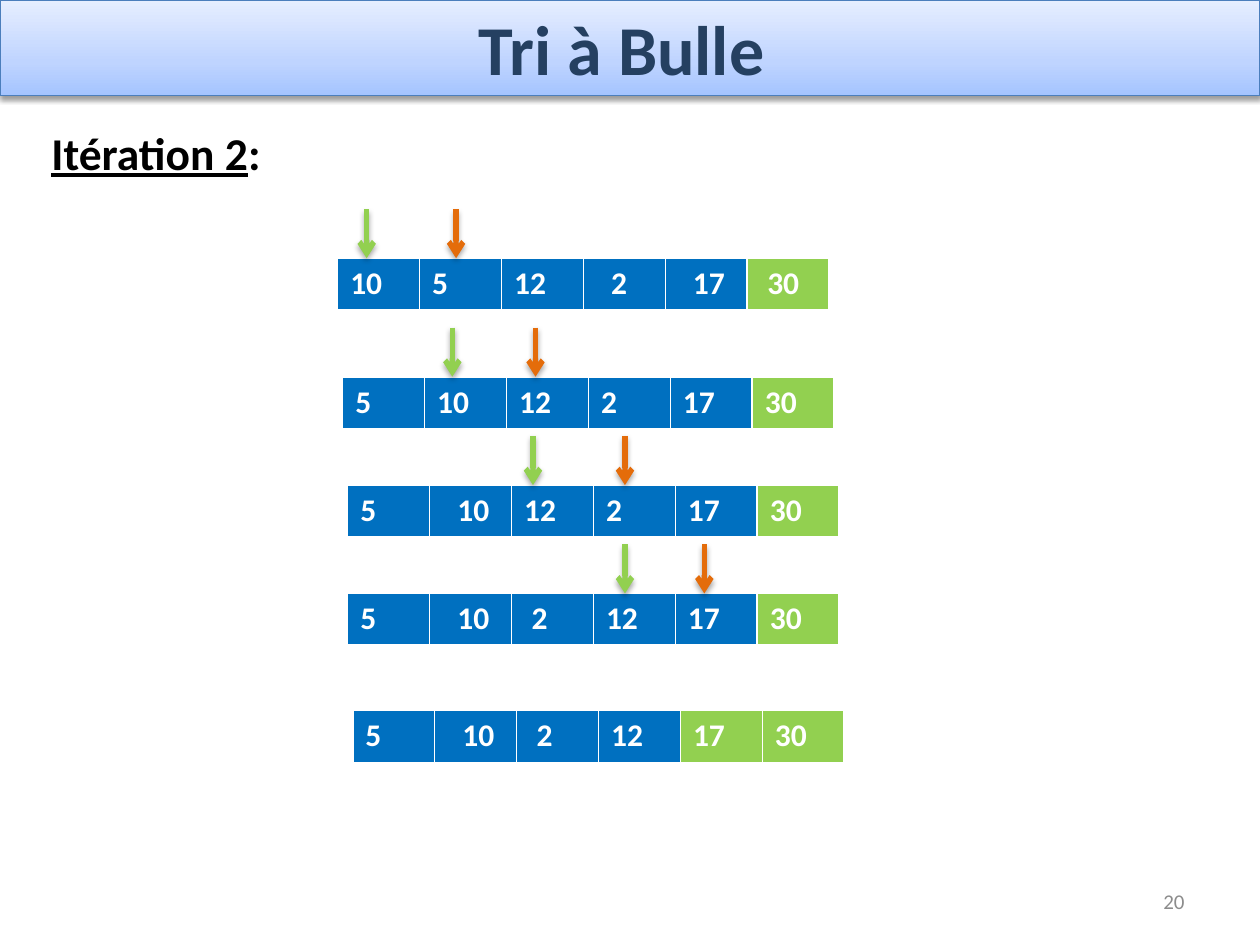
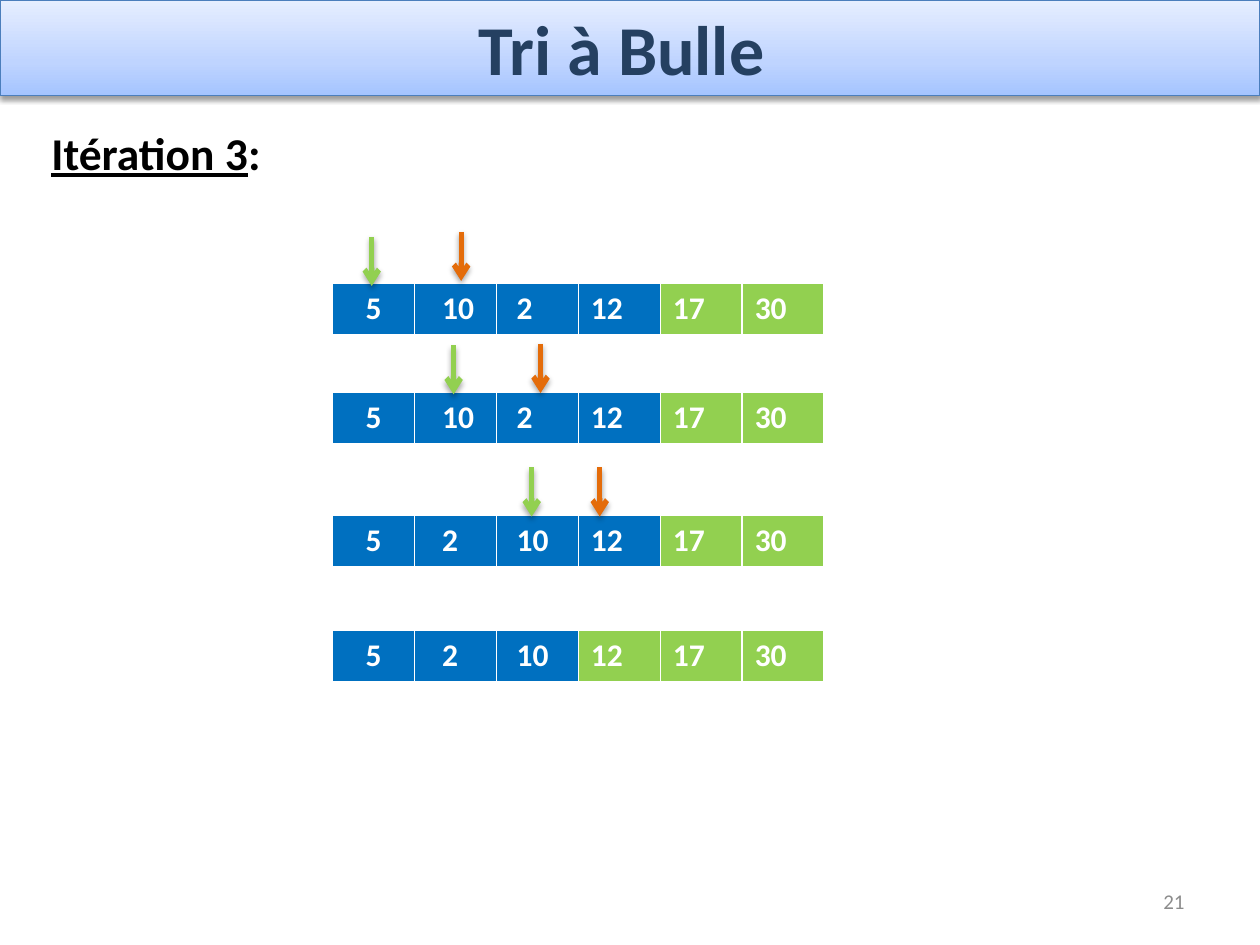
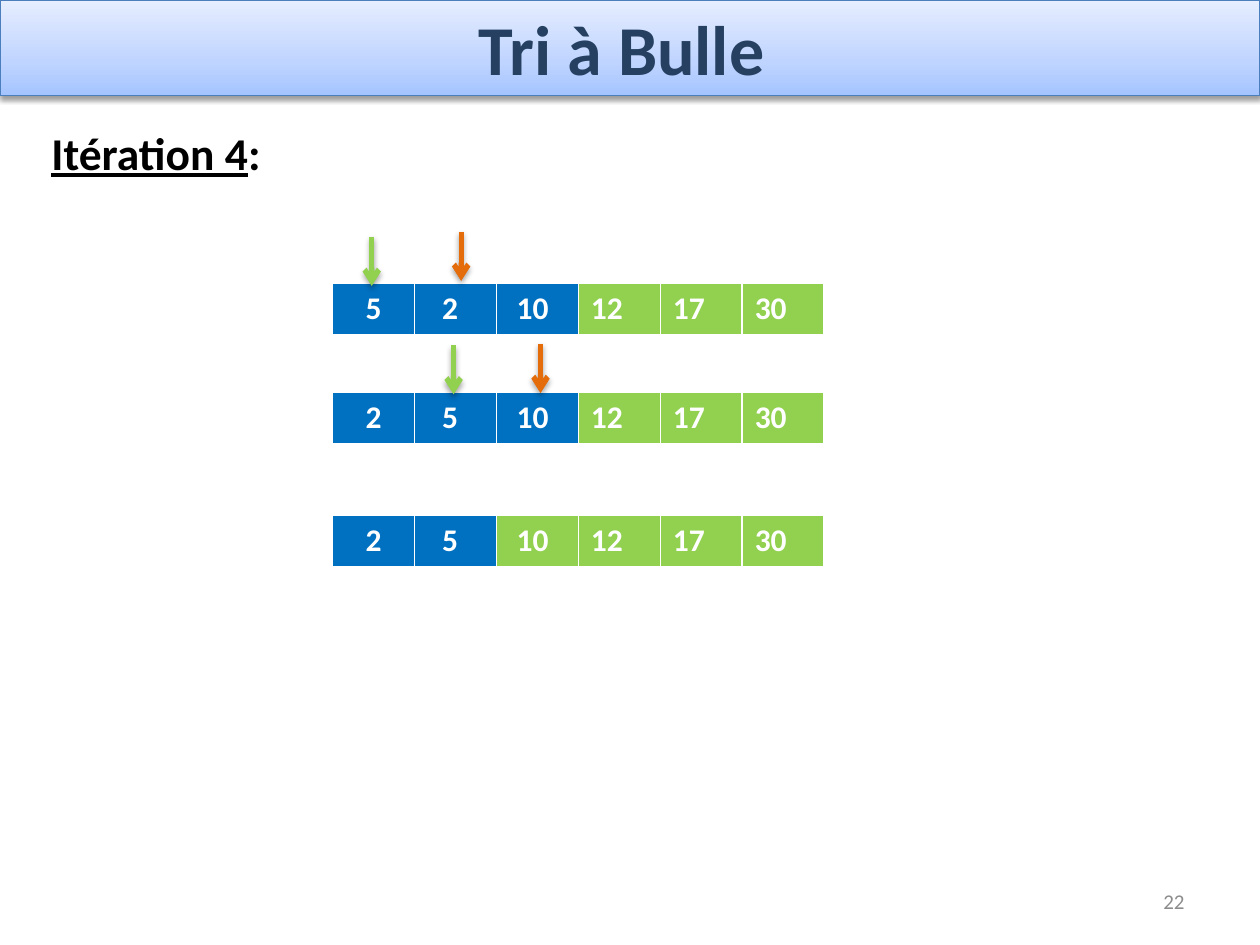
"""Build three slides that trace the bubble sort, one pass on each."""
from dataclasses import dataclass

from pptx import Presentation
from pptx.dml.color import RGBColor
from pptx.enum.shapes import MSO_CONNECTOR, MSO_SHAPE
from pptx.enum.text import MSO_ANCHOR, PP_ALIGN
from pptx.oxml import parse_xml
from pptx.oxml.ns import nsdecls
from pptx.util import Inches, Pt

STRAIGHT = MSO_CONNECTOR.STRAIGHT
RECT = MSO_SHAPE.RECTANGLE
MIDDLE = MSO_ANCHOR.MIDDLE
LEFT, CENTER, RIGHT = PP_ALIGN.LEFT, PP_ALIGN.CENTER, PP_ALIGN.RIGHT

FONT = "Calibri"
WHITE, BLACK, NAVY, GREY = "FFFFFF", "000000", "254061", "8C8C8C"
BLUE, GREEN, ORANGE, EDGE = "0070C0", "92D050", "E46C0A", "4B7EBC"
STOPS = ((0, "A4C4FF"), (35, "BFD4FF"), (100, "E6EEFF"))

CELL_W, CELL_H = 0.65, 0.41
INSET, STEP = 0.1, 0.06
SHAFT = 0.39
FIRST = 20


@dataclass(frozen=True)
class Mark:
    """An arrow, placed by its tip."""
    x: float
    tip: float


@dataclass(frozen=True)
class Spot:
    """The place of an array and of the arrows that compare two cells."""
    left: float
    top: float
    marks: tuple[Mark, ...] = ()


@dataclass(frozen=True)
class Row:
    """An array: its numbers, unsorted count and indent steps (c centres)."""
    spot: Spot
    nums: str
    blue: int
    pads: str = "c21000"


@dataclass(frozen=True)
class Page:
    """One pass of the sort."""
    head: str
    rows: tuple[Row, ...]


def pair(left: float, top: float, green: float, orange: float) -> Spot:
    """Place an array with two arrows that touch its top edge."""
    return Spot(left, top, (Mark(green, top), Mark(orange, top)))


SPOT_A = Spot(2.64, 2.25, (Mark(2.95, 2.27), Mark(3.66, 2.23)))
SPOT_B = Spot(2.64, 3.11, (Mark(3.6, 3.13), Mark(4.29, 3.12)))
SPOT_C = Spot(2.64, 4.09, (Mark(4.22, 4.1), Mark(4.76, 4.1)))

PAGES = (
    Page("Itération 2", (
        Row(pair(2.68, 2.05, 2.91, 3.62), "10 5 12 2 17 30", 5, "000221"),
        Row(pair(2.72, 2.99, 3.59, 4.25), "5 10 12 2 17 30", 5, "000000"),
        Row(pair(2.76, 3.85, 4.23, 4.96), "5 10 12 2 17 30", 5, "020000"),
        Row(pair(2.76, 4.71, 4.96, 5.59), "5 10 2 12 17 30", 5, "021000"),
        Row(Spot(2.8, 5.64), "5 10 2 12 17 30", 4, "021000"),
    )),
    Page("Itération 3", (
        Row(SPOT_A, "5 10 2 12 17 30", 4),
        Row(SPOT_B, "5 10 2 12 17 30", 4),
        Row(SPOT_C, "5 2 10 12 17 30", 4),
        Row(Spot(2.64, 5), "5 2 10 12 17 30", 3),
    )),
    Page("Itération 4", (
        Row(SPOT_A, "5 2 10 12 17 30", 3),
        Row(SPOT_B, "2 5 10 12 17 30", 3),
        Row(Spot(2.64, 4.09), "2 5 10 12 17 30", 2),
    )),
)


def paint(color, code: str) -> None:
    """Set a colour from a hex string."""
    color.rgb = RGBColor.from_string(code)


def style(para, size: int, code: str, bold: bool = True, align=LEFT) -> None:
    """Set the font and alignment of a paragraph."""
    para.alignment = align
    para.font.name, para.font.size, para.font.bold = FONT, Pt(size), bold
    paint(para.font.color, code)


def shade(props, alpha: int, dist: float) -> None:
    """Add a soft shadow below a shape or line."""
    props.append(parse_xml(
        f'<a:effectLst {nsdecls("a")}><a:outerShdw blurRad="{Pt(3.15)}" '
        f'dist="{Pt(dist)}" dir="5400000" rotWithShape="0">'
        f'<a:srgbClr val="{BLACK}"><a:alpha val="{alpha * 1000}"/>'
        '</a:srgbClr></a:outerShdw></a:effectLst>'))


def add_band(slide) -> None:
    """Draw the title band."""
    band = slide.shapes.add_shape(RECT, 0, 0, Inches(10), Inches(0.76))
    paint(band.line.color, EDGE)
    band.line.width = Pt(0.75)
    props = band.element.spPr
    stops = "".join(f'<a:gs pos="{pos * 1000}"><a:srgbClr val="{code}"/></a:gs>'
                    for pos, code in STOPS)
    props.insert(2, parse_xml(
        f'<a:gradFill {nsdecls("a")} rotWithShape="1"><a:gsLst>{stops}</a:gsLst>'
        '<a:lin ang="16200000" scaled="0"/></a:gradFill>'))
    shade(props, 38, 1.6)
    frame = band.text_frame
    frame.vertical_anchor = MIDDLE
    frame.margin_right = Inches(0.23)
    frame.text = "Tri à Bulle"
    style(frame.paragraphs[0], 40, NAVY, align=CENTER)


def add_box(slide, left: float, top: float, width: float, height: float):
    """Add a wrapping text box and return its frame."""
    box = slide.shapes.add_textbox(
        Inches(left), Inches(top), Inches(width), Inches(height))
    box.text_frame.word_wrap = True
    return box.text_frame


def add_head(slide, text: str) -> None:
    """Write the underlined heading and its colon."""
    para = add_box(slide, 0.31, 0.94, 9.38, 6.09).paragraphs[0]
    run = para.add_run()
    run.text, run.font.underline = text, True
    para.add_run().text = ":"
    style(para, 26, BLACK)


def add_foot(slide, num: int) -> None:
    """Write the page number."""
    frame = add_box(slide, 7.17, 6.95, 2.33, 0.4)
    frame.vertical_anchor = MIDDLE
    frame.text = str(num)
    style(frame.paragraphs[0], 12, GREY, bold=False, align=RIGHT)


def add_array(slide, row: Row) -> None:
    """Draw an array as a table of one row."""
    nums = row.nums.split()
    table = slide.shapes.add_table(
        1, len(nums), Inches(row.spot.left), Inches(row.spot.top),
        Inches(CELL_W * len(nums)), Inches(CELL_H)).table
    for i, (num, pad) in enumerate(zip(nums, row.pads)):
        table.columns[i].width = Inches(CELL_W)
        cell = table.cell(0, i)
        cell.text = num
        cell.fill.solid()
        paint(cell.fill.fore_color, BLUE if i < row.blue else GREEN)
        mid = pad == "c"
        cell.margin_left = Inches(INSET if mid else INSET + STEP * int(pad))
        style(cell.text_frame.paragraphs[0], 18, WHITE,
              align=CENTER if mid else LEFT)


def add_arrow(slide, mark: Mark, code: str) -> None:
    """Draw an arrow that points down at a cell."""
    x = Inches(mark.x)
    arrow = slide.shapes.add_connector(
        STRAIGHT, x, Inches(mark.tip - SHAFT), x, Inches(mark.tip))
    paint(arrow.line.color, code)
    arrow.line.width = Pt(3)
    props = arrow.element.spPr
    props.ln.append(parse_xml(f'<a:tailEnd {nsdecls("a")} type="arrow"/>'))
    shade(props, 35, 1.8)


def add_page(deck, page: Page, num: int) -> None:
    """Build one slide."""
    slide = deck.slides.add_slide(deck.slide_layouts[6])
    add_band(slide)
    add_head(slide, page.head)
    add_foot(slide, num)
    for row in page.rows:
        add_array(slide, row)
        for mark, code in zip(row.spot.marks, (GREEN, ORANGE)):
            add_arrow(slide, mark, code)


def main() -> None:
    """Build and save the deck."""
    deck = Presentation()
    deck.slide_width, deck.slide_height = Inches(10), Inches(7.5)
    for num, page in enumerate(PAGES, FIRST):
        add_page(deck, page, num)
    deck.save("out.pptx")


if __name__ == "__main__":
    main()
